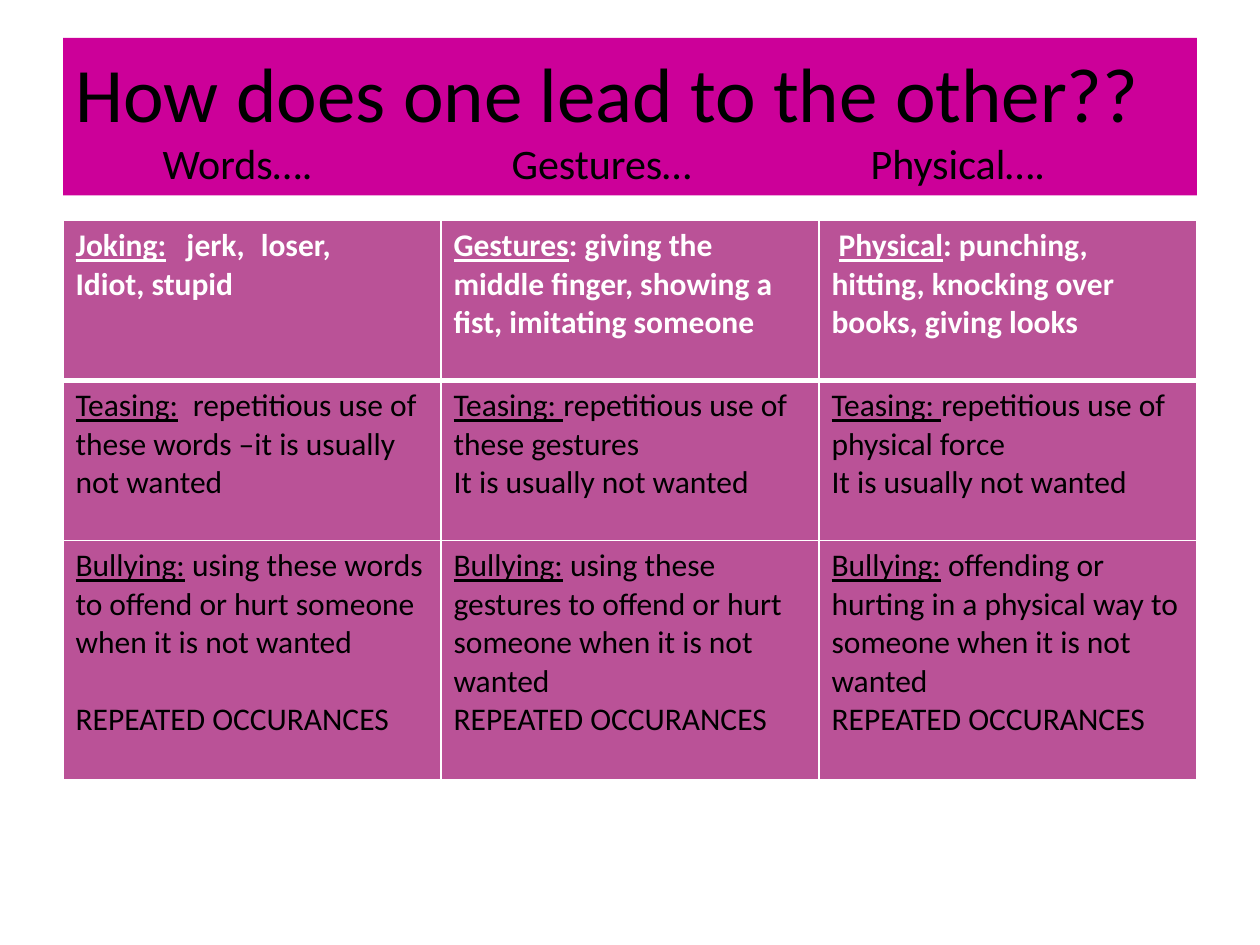
from dataclasses import dataclass

from lxml.etree import SubElement
from pptx import Presentation
from pptx.dml.color import RGBColor
from pptx.enum.text import MSO_ANCHOR, MSO_AUTO_SIZE, PP_ALIGN
from pptx.oxml.ns import qn
from pptx.util import Inches, Pt

FONT = "Calibri"
BLACK = "000000"
WHITE = "FFFFFF"
MAGENTA = "CC0099"
MAUVE = "BA5297"
COLUMN_WIDTH = 3
ROW_HEIGHTS = (1.27, 1.27, 1.9)
RULES = (1, 3, 1, 1)


@dataclass(frozen=True)
class Line:
    rest: str
    lead: str = ""
    indent: str = ""
    tabs: tuple[float, ...] = ()
    before: float = 0


REPEATED = Line("REPEATED OCCURANCES")
UNWANTED = Line("It is usually not wanted")
ROWS = (
    (
        (Line("\tjerk,\tloser,", "Joking:", tabs=(0.88, 1.47)), Line("Idiot, stupid")),
        (Line(": giving the middle finger, showing a fist, imitating someone", "Gestures"),),
        (Line(": punching, hitting, knocking over books, giving looks", "Physical", " "),),
    ),
    (
        (Line("\trepetitious use of these words –it is usually not wanted", "Teasing:", tabs=(0.93,)),),
        (Line("repetitious use of these gestures", "Teasing: "), UNWANTED),
        (Line("repetitious use of physical force", "Teasing: "), UNWANTED),
    ),
    (
        (
            Line(" using these words to offend or hurt someone when it is not wanted", "Bullying:"),
            Line(REPEATED.rest, before=22),
        ),
        (Line(" using these gestures to offend or hurt someone when it is not wanted", "Bullying:"), REPEATED),
        (Line(" offending or hurting in a physical way to someone when it is not wanted", "Bullying:"), REPEATED),
    ),
)


def rgb(color: str) -> RGBColor:
    return RGBColor.from_string(color)


def format_run(r, size: float, color: str, bold: bool = False, underline: bool = False) -> None:
    r.font.name = FONT
    r.font.size = Pt(size)
    r.font.color.rgb = rgb(color)
    r.font.bold = bold
    r.font.underline = underline


def set_tabs(p, stops: tuple[float, ...]) -> None:
    tab_list = SubElement(p._p.get_or_add_pPr(), qn("a:tabLst"))
    for stop in stops:
        SubElement(tab_list, qn("a:tab"), pos=str(Inches(stop)), algn="l")


def write_line(p, line: Line, size: float, color: str, bold: bool) -> None:
    p.alignment = PP_ALIGN.LEFT
    p.space_before = Pt(line.before)
    if line.tabs:
        set_tabs(p, line.tabs)
    for text, underline in ((line.indent, False), (line.lead, True), (line.rest, False)):
        if text:
            r = p.add_run()
            r.text = text
            format_run(r, size, color, bold, underline)


def set_borders(cell, top: float, bottom: float) -> None:
    props = cell._tc.get_or_add_tcPr()
    for side, width in (("L", 1), ("R", 1), ("T", top), ("B", bottom)):
        ln = SubElement(props, qn(f"a:ln{side}"), w=str(Pt(width)))
        fill = SubElement(ln, qn("a:solidFill"))
        SubElement(fill, qn("a:srgbClr"), val=WHITE)


def add_title(s) -> None:
    sp = s.shapes.title
    sp.left, sp.top, sp.width, sp.height = Inches(0.5), Inches(0.3), Inches(9), Inches(1.25)
    sp.fill.solid()
    sp.fill.fore_color.rgb = rgb(MAGENTA)
    tf = sp.text_frame
    tf.word_wrap = True
    tf.auto_size = MSO_AUTO_SIZE.NONE
    tf.vertical_anchor = MSO_ANCHOR.MIDDLE
    lines = (
        (Line("How does one lead to the other??"), 44),
        (Line("\tWords….\tGestures…\tPhysical….", tabs=(0.69, 3.46, 6.31)), 24),
    )
    for i, (line, size) in enumerate(lines):
        p = tf.add_paragraph() if i else tf.paragraphs[0]
        write_line(p, line, size, BLACK, False)


def fill_cell(cell, lines: tuple[Line, ...], row: int) -> None:
    header = row == 0
    set_borders(cell, RULES[row], RULES[row + 1])
    cell.fill.solid()
    cell.fill.fore_color.rgb = rgb(MAUVE)
    tf = cell.text_frame
    for i, line in enumerate(lines):
        p = tf.add_paragraph() if i else tf.paragraphs[0]
        write_line(p, line, 18, WHITE if header else BLACK, header)


def add_stages(s) -> None:
    columns = len(ROWS[0])
    table = s.shapes.add_table(
        len(ROWS), columns, Inches(0.5), Inches(1.75),
        Inches(columns * COLUMN_WIDTH), Inches(sum(ROW_HEIGHTS)),
    ).table
    for column in table.columns:
        column.width = Inches(COLUMN_WIDTH)
    for i, (height, cells) in enumerate(zip(ROW_HEIGHTS, ROWS)):
        table.rows[i].height = Inches(height)
        for j, lines in enumerate(cells):
            fill_cell(table.cell(i, j), lines, i)


def main() -> None:
    prs = Presentation()
    prs.slide_width, prs.slide_height = Inches(10), Inches(7.5)
    s = prs.slides.add_slide(prs.slide_layouts[5])
    add_title(s)
    add_stages(s)
    prs.save("out.pptx")


if __name__ == "__main__":
    main()
